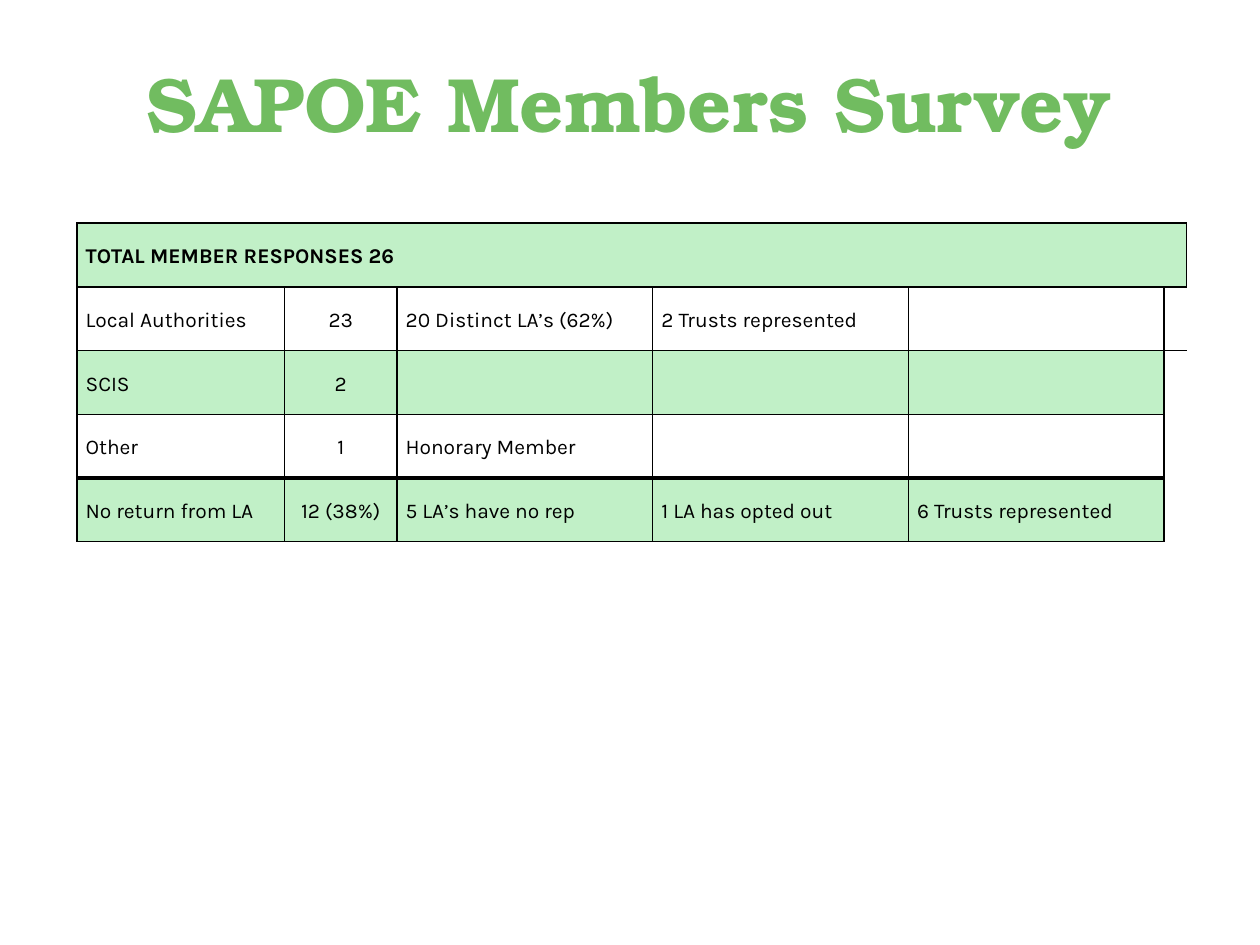
from lxml.etree import SubElement as Sub
from pptx import Presentation
from pptx.dml.color import RGBColor
from pptx.enum.text import MSO_ANCHOR as Anchor, PP_ALIGN as Align
from pptx.oxml.ns import qn
from pptx.util import Inches, Pt

GREEN, MINT, BLACK = "71BC60", "C1F0C7", "000000"


def write(frame, text, font="Karla", size=12, color=BLACK, bold=False,
          align=Align.LEFT, line=1.15, after=8):
    para = frame.paragraphs[0]
    para.alignment, para.line_spacing, para.space_after = align, line, Pt(after)
    run = para.add_run()
    run.text = text
    run.font.name, run.font.size, run.font.bold = font, Pt(size), bold
    run.font.color.rgb = RGBColor.from_string(color)


def border(cell, **sides):
    props = cell._tc.get_or_add_tcPr()
    for side in "LRTB":
        if side in sides:
            edge = Sub(props, qn(f"a:ln{side}"), w=str(Pt(sides[side])))
            Sub(Sub(edge, qn("a:solidFill")), qn("a:srgbClr"), val=BLACK)


deck = Presentation()
deck.slide_width, deck.slide_height = Inches(10), Inches(7.5)
slide = deck.slides.add_slide(deck.slide_layouts[6])
left, width = Inches(0.61), Inches(8.77)

# Title
box = slide.shapes.add_textbox(left, Inches(0.39), width, Inches(0.84))
box.text_frame.word_wrap = True
write(box.text_frame, "SAPOE Members Survey", font="TeX Gyre Bonum", size=44,
      color=GREEN, bold=True, align=Align.CENTER, line=1.0, after=0)

# Survey table: the narrow last column only carries the header's overhang
rows = [
    ["TOTAL MEMBER RESPONSES 26", "", "", "", "", ""],
    ["Local Authorities", "23", "20 Distinct LA’s (62%)", "2 Trusts represented", "", ""],
    ["SCIS", "2", "", "", "", ""],
    ["Other", "1", "Honorary Member", "", "", ""],
    ["No return from LA", "12 (38%)", "5 LA’s have no rep", "1 LA has opted out",
     "6 Trusts represented", ""],
]
cols = [1.65, 0.89, 2.03, 2.03, 2.03, 0.13]
last = len(cols) - 1
high = Inches(2.53) // len(rows)
table = slide.shapes.add_table(len(rows), len(cols), left, Inches(1.77),
                               width, high * len(rows)).table
table._tbl.tblPr.find(qn("a:tableStyleId")).text = "{2D5ABB26-0587-4C30-8999-92F81FD0307C}"
table.first_row = table.horz_banding = False
for col, wide in zip(table.columns, cols):
    col.width = Inches(wide)
table.cell(0, 0).merge(table.cell(0, last))

for r, row in enumerate(rows):
    table.rows[r].height = high
    for c, text in enumerate(row):
        cell = table.cell(r, c)
        cell.vertical_anchor = Anchor.MIDDLE
        cell.margin_left = cell.margin_right = Inches(0 if c == last else 0.07)
        cell.margin_top = cell.margin_bottom = 0
        # Thick rule above the final row
        if r and c == last:
            border(cell, L=1, **({"T": 1} if r == 1 else {}))
        else:
            border(cell, L=1, R=1, T=2.25 if r == 4 else 1, B=2.25 if r == 3 else 1)
        # Green on every other row
        if r % 2 == 0 and (r == 0 or c < last):
            cell.fill.solid()
            cell.fill.fore_color.rgb = RGBColor.from_string(MINT)
        else:
            cell.fill.background()
        if text:
            write(cell.text_frame, text, bold=r == 0,
                  align=Align.CENTER if c == 1 else Align.LEFT)

deck.save("out.pptx")
